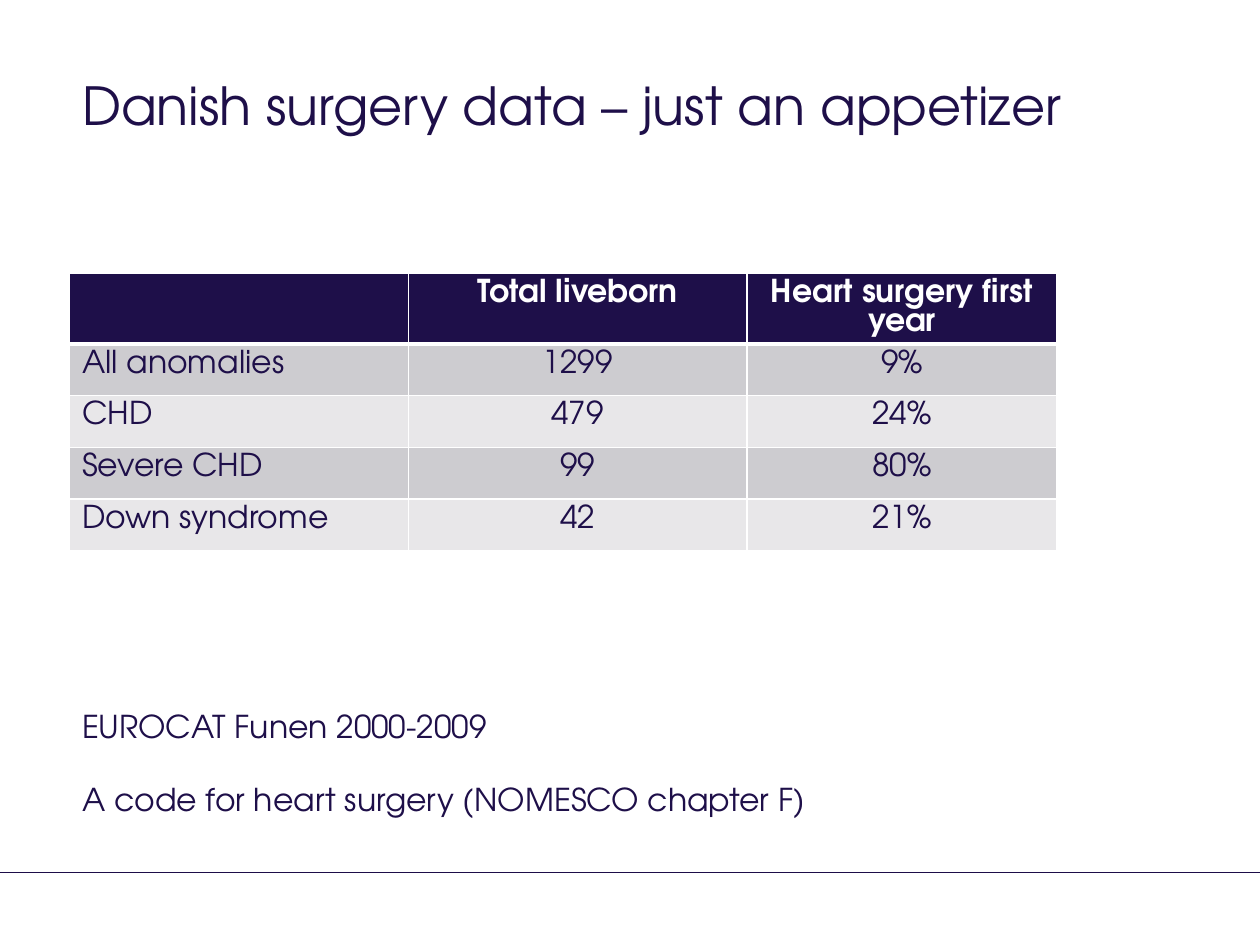
from lxml import etree
from pptx import Presentation
from pptx.dml.color import RGBColor
from pptx.enum.shapes import MSO_CONNECTOR
from pptx.enum.text import MSO_ANCHOR, MSO_AUTO_SIZE, PP_ALIGN
from pptx.oxml.ns import qn
from pptx.util import Cm, Pt

LEFT, CENTER = PP_ALIGN.LEFT, PP_ALIGN.CENTER
TOP, NO_FIT = MSO_ANCHOR.TOP, MSO_AUTO_SIZE.NONE
STRAIGHT = MSO_CONNECTOR.STRAIGHT
FONT = "TeX Gyre Adventor"
COLORS = {"navy": "1E0F49", "rule": "1D0D49", "white": "FFFFFF",
          "dark_band": "CDCCD0", "light_band": "E8E7E9"}
ROWS = [("", "Total liveborn", "Heart surgery first year"),
        ("All anomalies", "1299", "9%"),
        ("CHD", "479", "24%"),
        ("Severe CHD", "99", "80%"),
        ("Down syndrome", "42", "21%")]
NOTES = ["EUROCAT Funen 2000-2009",
         "A code for heart surgery (NOMESCO chapter F)"]


def rgb(name):
    """Return the named colour."""
    return RGBColor.from_string(COLORS[name])


def write(p, text, size=18, color="navy", bold=False, align=LEFT,
          before=0, spacing=None):
    """Write formatted text into a paragraph."""
    p.alignment = align
    p.space_before = Pt(before)
    if spacing:
        p.line_spacing = spacing
    r = p.add_run()
    r.text = text
    r.font.name, r.font.size, r.font.bold = FONT, Pt(size), bold
    r.font.color.rgb = rgb(color)


def place(sp, box):
    """Move a placeholder to its box and return its text frame."""
    sp.left, sp.top, sp.width, sp.height = box
    tf = sp.text_frame
    tf.word_wrap, tf.auto_size, tf.vertical_anchor = True, NO_FIT, TOP
    return tf


def add_title(s, box):
    """Fill the title placeholder."""
    tf = place(s.shapes.title, box)
    write(tf.paragraphs[0], "Danish surgery data – just an appetizer", size=30)


def add_notes(s, box):
    """Fill the body placeholder with unbulleted lines."""
    tf = place(s.placeholders[1], box)
    for i, text in enumerate(NOTES):
        p = tf.add_paragraph() if i else tf.paragraphs[0]
        pPr = p._p.get_or_add_pPr()
        pPr.set("marL", "0")
        pPr.set("indent", "0")
        etree.SubElement(pPr, qn("a:buNone"))
        write(p, text, before=20 if i else 0, spacing=1.0)


def set_borders(cell, bottom):
    """Draw white borders, with a given width in points at the bottom."""
    tcPr = cell._tc.get_or_add_tcPr()
    for side, width in (("L", 1), ("R", 1), ("T", 1), ("B", bottom)):
        ln = etree.SubElement(tcPr, qn("a:ln" + side), w=str(Pt(width)))
        fill = etree.SubElement(ln, qn("a:solidFill"))
        etree.SubElement(fill, qn("a:srgbClr"), val=COLORS["white"])


def add_surgery_table(s, box):
    """Add the banded table of surgery rates."""
    table = s.shapes.add_table(len(ROWS), len(ROWS[0]), *box).table
    for col, width in zip(table.columns, (6.83, 6.83, 6.25)):
        col.width = Cm(width)
    for i, row in enumerate(ROWS):
        table.rows[i].height = Cm(1.04)
        header = i == 0
        band = "navy" if header else "dark_band" if i % 2 else "light_band"
        for j, text in enumerate(row):
            cell = table.cell(i, j)
            set_borders(cell, 3 if header else 1)
            cell.fill.solid()
            cell.fill.fore_color.rgb = rgb(band)
            if text:
                write(cell.text_frame.paragraphs[0], text, bold=header,
                      color="white" if header else "navy",
                      align=CENTER if j else LEFT, spacing=Pt(16.6))


def add_footer_rule(s, left, top, width):
    """Add the thin rule above the footer."""
    line = s.shapes.add_connector(STRAIGHT, left, top, left + width, top)
    line.line.color.rgb = rgb("rule")
    line.line.width = Pt(0.25)
    etree.SubElement(line._element.spPr, qn("a:effectLst"))


def main():
    """Build and save the slide."""
    prs = Presentation()
    prs.slide_width, prs.slide_height = Cm(25.4), Cm(19.05)
    s = prs.slides.add_slide(prs.slide_layouts[1])
    left = Cm(1.4)
    add_footer_rule(s, 0, Cm(17.58), prs.slide_width)
    add_title(s, (left, Cm(1.35), Cm(20.98), Cm(3.1)))
    add_surgery_table(s, (left, Cm(5.51), Cm(19.91), Cm(5.2)))
    add_notes(s, (left, Cm(14.12), Cm(21.03), Cm(2.9)))
    prs.save("out.pptx")


if __name__ == "__main__":
    main()
